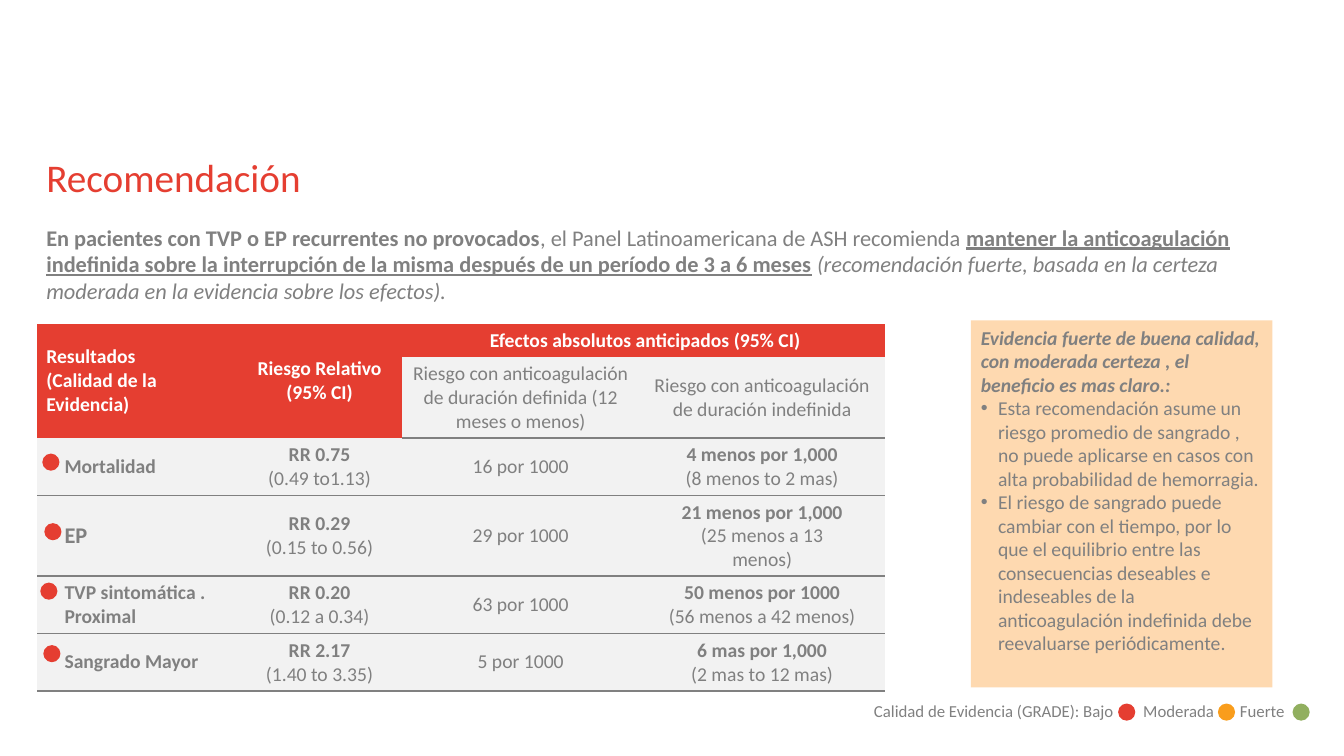
from dataclasses import dataclass

from lxml.etree import SubElement
from pptx import Presentation
from pptx.dml.color import RGBColor
from pptx.enum.shapes import MSO_SHAPE
from pptx.enum.text import MSO_ANCHOR, PP_ALIGN
from pptx.oxml.ns import qn
from pptx.util import Inches, Pt


@dataclass(frozen=True)
class Theme:
    """Colours, font and type sizes of the slide."""
    font: str = "Calibri"
    red: str = "E53E31"
    orange: str = "F99D1C"
    green: str = "91AF5F"
    grey: str = "808080"
    pale: str = "F2F2F2"
    peach: str = "FED9B0"
    white: str = "FFFFFF"
    title: int = 28
    body: int = 16
    small: int = 14
    legend: int = 12


T = Theme()
DOT = 0.17
COLS = [1.95, 1.67, 2.32, 2.47]
ROWS = [0.33, 0.79, 0.57, 0.8, 0.57, 0.57]
HEADERS = ["Resultados\n(Calidad de la Evidencia)", "Riesgo Relativo\n(95% CI)",
           "Efectos absolutos anticipados (95% CI)"]
SUBHEADERS = ["Riesgo con anticoagulación de duración definida (12 meses o menos)",
              "Riesgo con anticoagulación de duración indefinida"]
OUTCOMES = [
    ("Mortalidad", "RR 0.75\n(0.49 to1.13)", "16 por 1000",
     "4 menos por 1,000\n(8 menos to 2 mas)"),
    ("EP", "RR 0.29\n(0.15 to 0.56)", "29 por 1000",
     "21 menos por 1,000\n(25 menos a 13\nmenos)"),
    ("TVP sintomática .\nProximal", "RR 0.20\n(0.12 a 0.34)", "63 por 1000",
     "50 menos por 1000\n(56 menos a 42 menos)"),
    ("Sangrado Mayor", "RR 2.17\n(1.40 to 3.35)", "5 por 1000",
     "6 mas por 1,000\n(2 mas to 12 mas)"),
]
OUTCOME_DOTS = [(0.05, 1.29), (0.07, 1.98), (0.03, 2.57), (0.06, 3.19)]
RECOMMENDATION = [
    ("En pacientes con TVP o EP recurrentes no provocados", "b"),
    (", el Panel Latinoamericana de ASH recomienda ", ""),
    ("mantener la anticoagulación indefinida sobre la interrupción de la misma "
     "después de un período de 3 a 6 meses", "bu"),
    (" ", ""),
    ("(recomendación fuerte, basada en la certeza moderada en la evidencia "
     "sobre los efectos).", "i"),
]
EVIDENCE = [
    "Evidencia fuerte de buena calidad, con moderada certeza , el beneficio es mas claro.:",
    "Esta recomendación asume un riesgo promedio de sangrado , no puede aplicarse en "
    "casos con alta probabilidad de hemorragia.",
    "El riesgo de sangrado puede cambiar con el tiempo, por lo que el equilibrio entre "
    "las consecuencias deseables e indeseables de la anticoagulación indefinida debe "
    "reevaluarse periódicamente.",
]


def style(r, size, color=T.grey, marks=""):
    """Format a run; marks holds b, i and u for bold, italic and underline."""
    f = r.font
    f.name, f.size = T.font, Pt(size)
    f.color.rgb = RGBColor.from_string(color)
    f.bold, f.italic, f.underline = "b" in marks, "i" in marks, "u" in marks


def paint(target, color):
    """Give a shape or cell a solid fill."""
    target.fill.solid()
    target.fill.fore_color.rgb = RGBColor.from_string(color)


def add_block(slide, kind, x, y, w, h, color):
    """Add a borderless preset shape."""
    sp = slide.shapes.add_shape(kind, Inches(x), Inches(y), Inches(w), Inches(h))
    sp.shadow.inherit = False
    sp.line.fill.background()
    paint(sp, color)
    return sp


def add_dot(slide, x, y, color):
    """Add an evidence quality dot."""
    add_block(slide, MSO_SHAPE.OVAL, x, y, DOT, DOT, color)


def add_text(slide, x, y, w, h):
    """Add a wrapping text box and return its text frame."""
    tf = slide.shapes.add_textbox(Inches(x), Inches(y), Inches(w), Inches(h)).text_frame
    tf.word_wrap = True
    return tf


def add_title(slide, x, y, w, h):
    """Place and format the title placeholder."""
    sp = slide.shapes.title
    sp.left, sp.top, sp.width, sp.height = map(Inches, (x, y, w, h))
    tf = sp.text_frame
    tf.margin_left = 0
    tf.vertical_anchor = MSO_ANCHOR.TOP
    tf.text = "Recomendación"
    p = tf.paragraphs[0]
    p.alignment = PP_ALIGN.LEFT
    style(p.runs[0], T.title, T.red)


def add_recommendation(slide, x, y, w, h):
    """Write the recommendation paragraph."""
    tf = add_text(slide, x, y, w, h)
    tf.margin_left = tf.margin_right = tf.margin_top = tf.margin_bottom = 0
    for text, marks in RECOMMENDATION:
        r = tf.paragraphs[0].add_run()
        r.text = text
        style(r, T.body, marks=marks)


def set_borders(cell, lined):
    """Draw rules on the named sides of a cell and clear the others."""
    tcPr = cell._tc.get_or_add_tcPr()
    for side in "LRTB":
        ln = SubElement(tcPr, qn(f"a:ln{side}"), w=str(Pt(1)))
        if side in lined:
            fill = SubElement(ln, qn("a:solidFill"))
            SubElement(fill, qn("a:srgbClr"), val=T.grey)
        else:
            SubElement(ln, qn("a:noFill"))


def fill_cell(cell, text, fill, color=T.grey, bold_lines=0, lined="", left=False,
              size=T.small):
    """Fill a table cell, with its first bold_lines paragraphs in bold."""
    set_borders(cell, lined)
    paint(cell, fill)
    cell.vertical_anchor = MSO_ANCHOR.MIDDLE
    cell.margin_left, cell.margin_right = Inches(0.09), Inches(0.06)
    cell.text = text
    for i, p in enumerate(cell.text_frame.paragraphs):
        p.alignment = PP_ALIGN.LEFT if left else PP_ALIGN.CENTER
        for r in p.runs:
            style(r, size, color, "b" if i < bold_lines else "")


def add_results(slide, x, y):
    """Build the results table and its evidence dots."""
    frame = slide.shapes.add_table(len(ROWS), len(COLS), Inches(x), Inches(y),
                                   Inches(sum(COLS)), Inches(sum(ROWS)))
    table = frame.table
    table.first_row = table.horz_banding = False
    for col, w in zip(table.columns, COLS):
        col.width = Inches(w)
    for row, h in zip(table.rows, ROWS):
        row.height = Inches(h)
    for c, text in enumerate(HEADERS):
        fill_cell(table.cell(0, c), text, T.red, T.white, 2, left=c == 0)
    for c in range(2):
        fill_cell(table.cell(1, c), "", T.red)
        table.cell(0, c).merge(table.cell(1, c))
    table.cell(0, 2).merge(table.cell(0, 3))
    for c, text in enumerate(SUBHEADERS, 2):
        fill_cell(table.cell(1, c), text, T.pale, lined="B")
    for n, outcome in enumerate(OUTCOMES, 2):
        for c, (text, bold_lines) in enumerate(zip(outcome, (2, 1, 0, 1))):
            lined = "B" if n == 2 and c < 2 else "TB"
            size = T.body if text == "EP" else T.small
            fill_cell(table.cell(n, c), text, T.pale, T.grey, bold_lines, lined, c == 0, size)
        table.cell(n, 0).margin_left = Inches(0.27)
    for dx, dy in OUTCOME_DOTS:
        add_dot(slide, x + dx, y + dy, T.red)


def add_evidence(slide, x, y, w, h):
    """Build the side panel about the strength of the evidence."""
    tf = add_block(slide, MSO_SHAPE.RECTANGLE, x, y, w, h, T.peach).text_frame
    tf.word_wrap = True
    tf.vertical_anchor = MSO_ANCHOR.TOP
    tf.text = "\n".join(EVIDENCE)
    for i, p in enumerate(tf.paragraphs):
        p.alignment = PP_ALIGN.LEFT
        if i:
            pPr = p._p.get_or_add_pPr()
            pPr.set("marL", str(Inches(0.17)))
            pPr.set("indent", str(-Inches(0.17)))
            SubElement(pPr, qn("a:buFont"), typeface="Arial")
            SubElement(pPr, qn("a:buChar"), char="•")
        style(p.runs[0], T.small, marks="" if i else "bi")


def add_legend(slide, x, y, w, h):
    """Build the key to the evidence quality dots."""
    tf = add_text(slide, x, y, w, h)
    p = tf.paragraphs[0]
    p.text = "Calidad de Evidencia (GRADE): Bajo\tModerada\tFuerte"
    tabs = SubElement(p._p.get_or_add_pPr(), qn("a:tabLst"))
    for stop in (2.67, 3.63):
        SubElement(tabs, qn("a:tab"), pos=str(Inches(stop)), algn="l")
    for r in p.runs:
        style(r, T.legend)
    for dx, color in ((2.52, T.red), (3.51, T.orange), (4.25, T.green)):
        add_dot(slide, x + dx, y + 0.08, color)


def main():
    """Build the slide and save it."""
    prs = Presentation()
    prs.slide_width, prs.slide_height = Inches(13.33), Inches(7.5)
    s = prs.slides.add_slide(prs.slide_layouts[5])
    add_title(s, 0.46, 1.47, 12, 0.78)
    add_recommendation(s, 0.46, 2.22, 12, 0.9)
    add_results(s, 0.37, 3.21)
    add_evidence(s, 9.63, 3.18, 2.99, 3.64)
    add_legend(s, 8.57, 6.9, 4.76, 0.3)
    prs.save("out.pptx")


if __name__ == "__main__":
    main()
